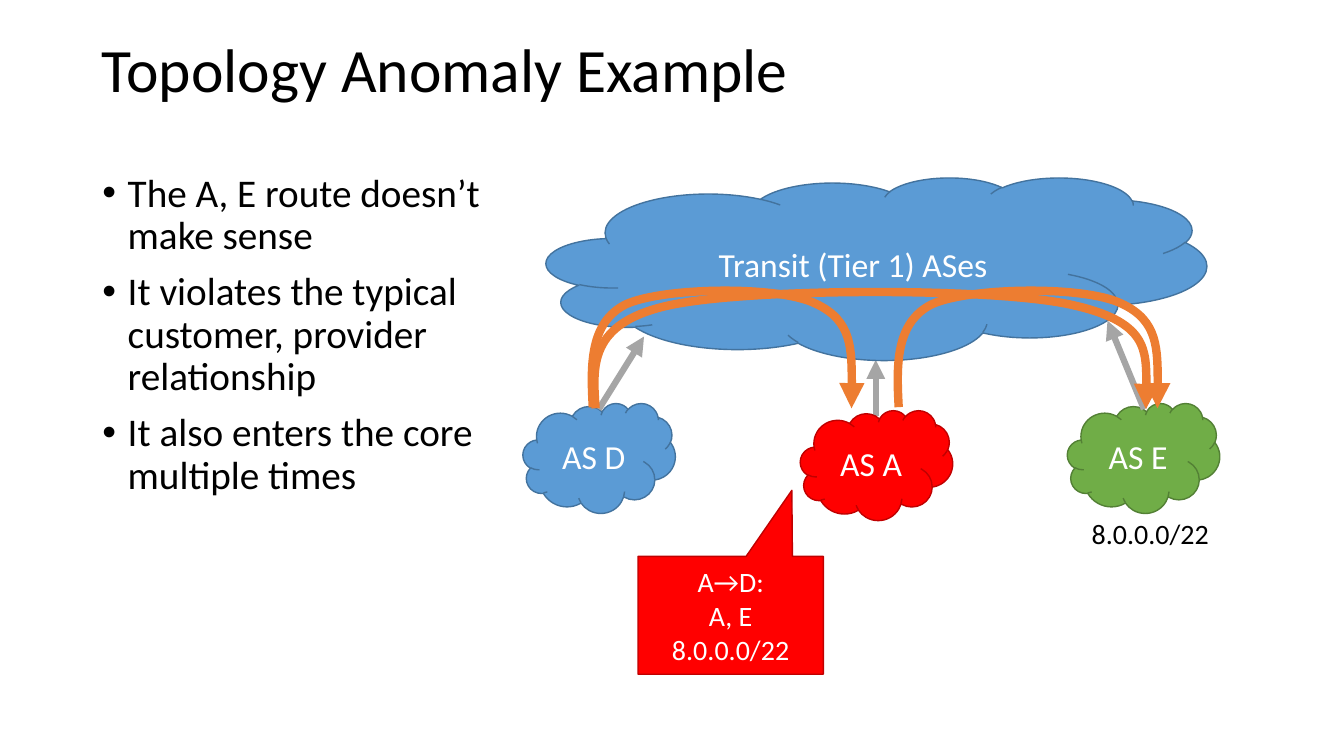
from pptx import Presentation
from pptx.dml.color import RGBColor
from pptx.enum.shapes import MSO_CONNECTOR, MSO_SHAPE
from pptx.enum.text import MSO_ANCHOR as Anchor, PP_ALIGN as Align
from pptx.oxml.ns import qn
from pptx.util import Cm, Pt
from lxml.etree import SubElement

BLACK = RGBColor(0x00, 0x00, 0x00)
WHITE = RGBColor(0xFF, 0xFF, 0xFF)
BLUE = RGBColor(0x5B, 0x9B, 0xD5)
DARK_BLUE = RGBColor(0x43, 0x73, 0x9E)
RED = RGBColor(0xFF, 0x00, 0x00)
DARK_RED = RGBColor(0xC0, 0x00, 0x00)
GREEN = RGBColor(0x70, 0xAD, 0x47)
DARK_GREEN = RGBColor(0x53, 0x80, 0x35)
GRAY = RGBColor(0xA5, 0xA5, 0xA5)
ORANGE = RGBColor(0xED, 0x7D, 0x31)

HEADING = {"line_spacing": 0.9}
BULLET = {"line_spacing": 0.9, "space_before": Pt(10)}
CENTERED = {"alignment": Align.CENTER}


class TopologySlide:
    font = "Calibri"

    def __init__(self, presentation):
        self.shapes = presentation.slides.add_slide(presentation.slide_layouts[6]).shapes

    def set_text(self, shape, text, size, color, paragraph_format, anchor, wrap=True):
        frame = shape.text_frame
        frame.text = text
        frame.word_wrap = wrap
        frame.vertical_anchor = anchor
        for paragraph in frame.paragraphs:
            for name, value in paragraph_format.items():
                setattr(paragraph, name, value)
            font_format = {"name": self.font, "size": Pt(size)}
            for name, value in font_format.items():
                setattr(paragraph.font, name, value)
            paragraph.font.color.rgb = color

    def text(self, box, text, size, paragraph_format, anchor=Anchor.TOP, wrap=True):
        shape = self.shapes.add_textbox(*map(Cm, box))
        self.set_text(shape, text, size, BLACK, paragraph_format, anchor, wrap)
        return shape

    def bullets(self, box, items, size):
        shape = self.text(box, "\n".join(items), size, BULLET)
        for paragraph in shape.text_frame.paragraphs:
            properties = paragraph._p.get_or_add_pPr()
            properties.set("marL", str(Cm(0.64)))
            properties.set("indent", str(-Cm(0.64)))
            SubElement(properties, qn("a:buFont"), typeface="Arial")
            SubElement(properties, qn("a:buChar"), char="•")

    def filled(self, preset, box, fill, outline, text, size=24):
        shape = self.shapes.add_shape(preset, *map(Cm, box))
        shape.shadow.inherit = False
        shape.fill.solid()
        shape.fill.fore_color.rgb = fill
        self.stroke(shape, outline, 1)
        self.set_text(shape, text, size, WHITE, CENTERED, Anchor.MIDDLE)
        return shape

    def stroke(self, shape, color, width, arrow=False):
        shape.line.color.rgb = color
        shape.line.width = Pt(width)
        if arrow:
            line = shape._element.spPr.find(qn("a:ln"))
            SubElement(line, qn("a:tailEnd"), type="triangle")

    def uplink(self, start, end):
        """Draw a gray arrow from a customer AS to its provider."""
        connector = self.shapes.add_connector(
            MSO_CONNECTOR.STRAIGHT, *map(Cm, start + end))
        self.stroke(connector, GRAY, 4.5, arrow=True)
        SubElement(connector._element.spPr, qn("a:effectLst"))

    def route(self, points, shift=0):
        """Draw an orange arrow along Bézier points: a start, then threes."""
        start, *rest = [(Cm(x + shift), Cm(y)) for x, y in points]
        builder = self.shapes.build_freeform(*start)
        builder.add_line_segments(rest, close=False)
        shape = builder.convert_to_shape()
        outline = shape._element.spPr.find(".//" + qn("a:path"))
        outline.set("fill", "none")
        segments = outline.findall(qn("a:lnTo"))
        for first in range(0, len(segments), 3):
            curve = SubElement(outline, qn("a:cubicBezTo"))
            for segment in segments[first:first + 3]:
                curve.append(segment[0])
                outline.remove(segment)
        shape.shadow.inherit = False
        shape.fill.background()
        self.stroke(shape, ORANGE, 6, arrow=True)


def main():
    presentation = Presentation()
    presentation.slide_width = Cm(33.87)
    presentation.slide_height = Cm(19.05)
    slide = TopologySlide(presentation)

    slide.text((2.32, 0, 29.21, 3.68), "Topology Anomaly Example", 44, HEADING,
               Anchor.MIDDLE)

    slide.uplink((22.07, 10.49), (22.07, 9.07))
    slide.filled(MSO_SHAPE.CLOUD, (13.77, 4.47, 16.64, 4.6), BLUE, DARK_BLUE,
                 "Transit (Tier 1) ASes")
    for name, left, top, fill, outline in (
        ("AS A", 20.17, 10.34, RED, DARK_RED),
        ("AS E", 26.9, 10.16, GREEN, DARK_GREEN),
        ("AS D", 13.18, 10.16, BLUE, DARK_BLUE),
    ):
        slide.filled(MSO_SHAPE.CLOUD, (left, top, 3.84, 2.77), fill, outline, name)
    slide.uplink((15.09, 10.31), (16.23, 8.48))
    slide.uplink((28.83, 10.31), (27.91, 8.08))

    slide.route([(15.01, 10.29),
                 (14.94, 9.22), (14.83, 8.15), (16.84, 7.7),
                 (18.82, 7.26), (24.94, 7.24), (26.95, 7.67),
                 (28.96, 8.1), (28.93, 9.19), (28.88, 10.31)])
    hop = [(14.94, 10.26),
           (14.88, 9.19), (14.86, 8.13), (15.77, 7.67),
           (16.71, 7.24), (19.61, 7.19), (20.55, 7.65),
           (21.49, 8.08), (21.49, 9.17), (21.46, 10.29)]
    for shift in (0, 7.71):
        slide.route(hop, shift)

    callout = slide.filled(MSO_SHAPE.RECTANGULAR_CALLOUT, (16.08, 14.02, 4.67, 2.97),
                           RED, DARK_RED, "A→D:\nA, E\n8.0.0.0/22", 20)
    callout.adjustments[0] = 0.33
    callout.adjustments[1] = -1.06
    slide.text((27.25, 12.9, 3.48, 1.12), "8.0.0.0/22", 20, CENTERED, wrap=False)
    slide.bullets((2.33, 4.24, 10.21, 13.92), (
        "The A, E route doesn’t make sense",
        "It violates the typical customer, provider relationship",
        "It also enters the core multiple times",
    ), 28)

    presentation.save("out.pptx")


if __name__ == "__main__":
    main()
